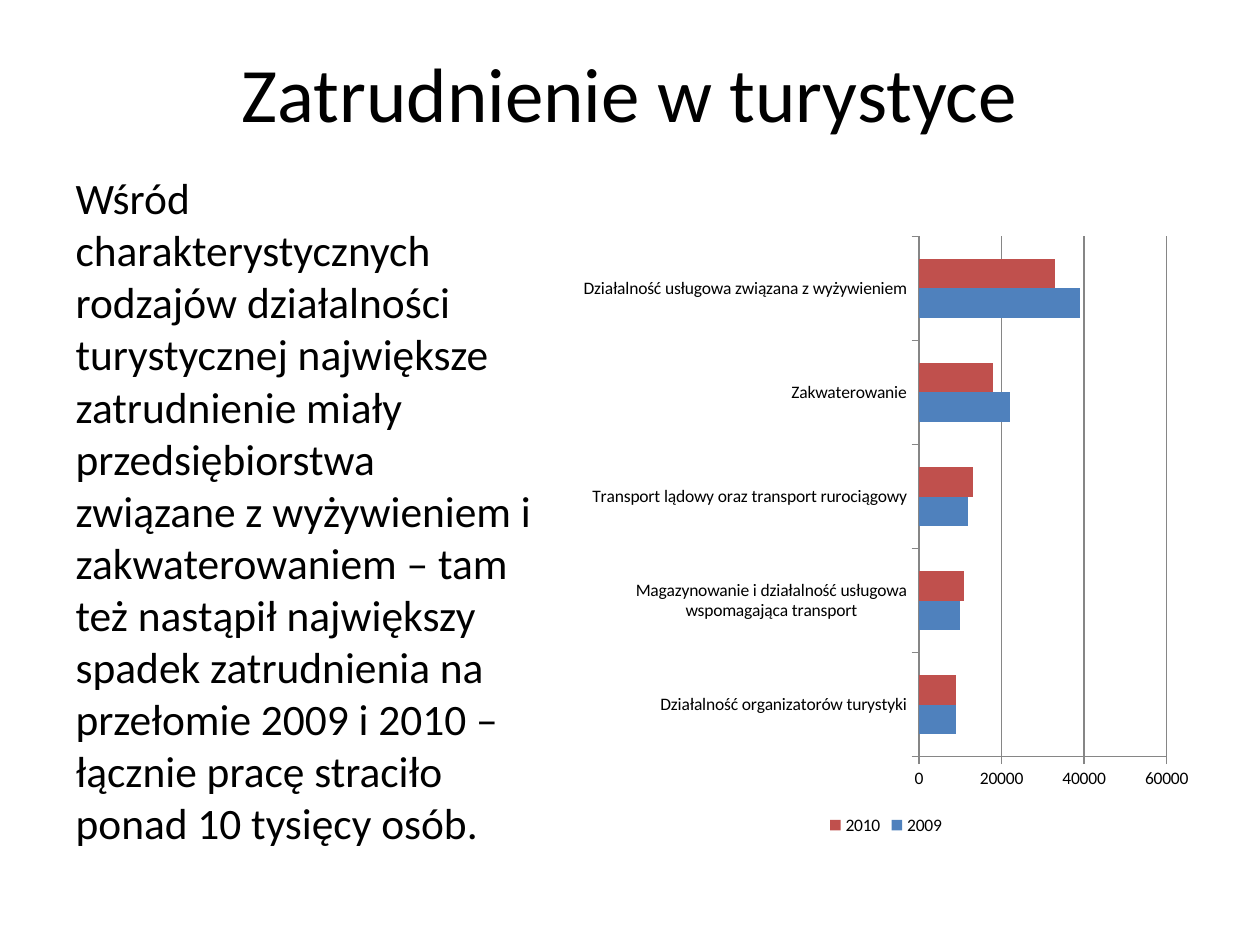
from pptx import Presentation
from pptx.chart.data import CategoryChartData
from pptx.dml.color import RGBColor
from pptx.enum.chart import XL_CHART_TYPE, XL_LEGEND_POSITION, XL_TICK_MARK
from pptx.enum.text import MSO_ANCHOR, MSO_AUTO_SIZE, PP_ALIGN
from pptx.oxml.xmlchemy import OxmlElement
from pptx.util import Emu, Pt

PX = 914400 / 126
BLACK = RGBColor(0x00, 0x00, 0x00)
GRAY = RGBColor(0x86, 0x86, 0x86)
BLUE = RGBColor(0x4F, 0x81, 0xBD)
RED = RGBColor(0xC0, 0x50, 0x4D)

TITLE = "Zatrudnienie w turystyce"
BODY = (
    "Wśród charakterystycznych rodzajów działalności turystycznej największe "
    "zatrudnienie miały przedsiębiorstwa związane z wyżywieniem i zakwaterowaniem "
    "– tam też nastąpił największy spadek zatrudnienia na przełomie 2009 i 2010 "
    "– łącznie pracę straciło ponad 10 tysięcy osób."
)
EMPLOYMENT = [
    ("Działalność organizatorów turystyki", 9000, 9000),
    ("Magazynowanie i działalność usługowa wspomagająca transport", 10000, 11000),
    ("Transport lądowy oraz transport rurociągowy", 12000, 13000),
    ("Zakwaterowanie", 22000, 18000),
    ("Działalność usługowa związana z wyżywieniem", 39000, 33000),
]
YEARS = {"2009": BLUE, "2010": RED}


def to_emu(box):
    """Turn a box of px lengths into EMU."""
    return [Emu(round(length * PX)) for length in box]


def set_format(target, values):
    """Set each attribute of target from a dict."""
    for name, value in values.items():
        setattr(target, name, value)


def set_font(font, size):
    """Apply the deck font at the given point size."""
    set_format(font, {"name": "Calibri", "size": Pt(size)})
    font.color.rgb = BLACK


def fill_placeholder(holder, box, text, size, align, anchor):
    """Move a placeholder to its box, write its text and return the paragraph."""
    places = ("left", "top", "width", "height")
    set_format(holder, dict(zip(places, to_emu(box))))
    set_format(holder.text_frame, {
        "word_wrap": True,
        "auto_size": MSO_AUTO_SIZE.NONE,
        "vertical_anchor": anchor,
    })
    para = holder.text_frame.paragraphs[0]
    para.alignment = align
    span = para.add_run()
    span.text = text
    set_font(span.font, size)
    return para


def add_title(page, box):
    """Write the centred title."""
    fill_placeholder(page.shapes.title, box, TITLE, 44,
                     PP_ALIGN.CENTER, MSO_ANCHOR.MIDDLE)


def add_body(page, box):
    """Write the body paragraph without a bullet or indent."""
    para = fill_placeholder(page.placeholders[1], box, BODY, 24.8,
                            PP_ALIGN.LEFT, MSO_ANCHOR.TOP)
    properties = para._p.get_or_add_pPr()
    for name in ("marL", "indent"):
        properties.set(name, "0")
    properties.append(OxmlElement("a:buNone"))


def style_axis(axis):
    """Give an axis gray lines and outside ticks."""
    set_format(axis, {
        "major_tick_mark": XL_TICK_MARK.OUTSIDE,
        "minor_tick_mark": XL_TICK_MARK.NONE,
    })
    axis.format.line.color.rgb = GRAY
    axis.format.line.width = Pt(0.75)


def add_employment_chart(page, box):
    """Draw employment by activity and year as clustered bars."""
    labels, *columns = zip(*EMPLOYMENT)
    data = CategoryChartData(number_format="General")
    data.categories = labels
    for year, column in zip(YEARS, columns):
        data.add_series(year, column)
    chart = page.shapes.add_chart(
        XL_CHART_TYPE.BAR_CLUSTERED, *to_emu(box), data).chart
    set_font(chart.font, 10)
    set_format(chart, {"has_title": False, "has_legend": True})
    set_format(chart.legend, {
        "position": XL_LEGEND_POSITION.BOTTOM,
        "include_in_layout": False,
    })
    plot = chart.plots[0]
    set_format(plot, {"gap_width": 150, "overlap": 0, "vary_by_categories": False})
    for series, color in zip(plot.series, YEARS.values()):
        series.format.fill.solid()
        series.format.fill.fore_color.rgb = color
    for axis in (chart.category_axis, chart.value_axis):
        style_axis(axis)
    set_format(chart.value_axis, {
        "minimum_scale": 0,
        "maximum_scale": 60000,
        "major_unit": 20000,
        "has_major_gridlines": True,
    })
    gridline = chart.value_axis.major_gridlines.format.line
    gridline.color.rgb = GRAY
    gridline.width = Pt(0.75)


def main():
    """Build the deck and save it."""
    deck = Presentation()
    deck.slide_width, deck.slide_height = to_emu((1260, 945))
    page = deck.slides.add_slide(deck.slide_layouts[1])
    add_title(page, (63, 38, 1134, 107))
    add_body(page, (63, 165, 488, 684))
    add_employment_chart(page, (571, 224, 630, 616))
    deck.save("out.pptx")


if __name__ == "__main__":
    main()
